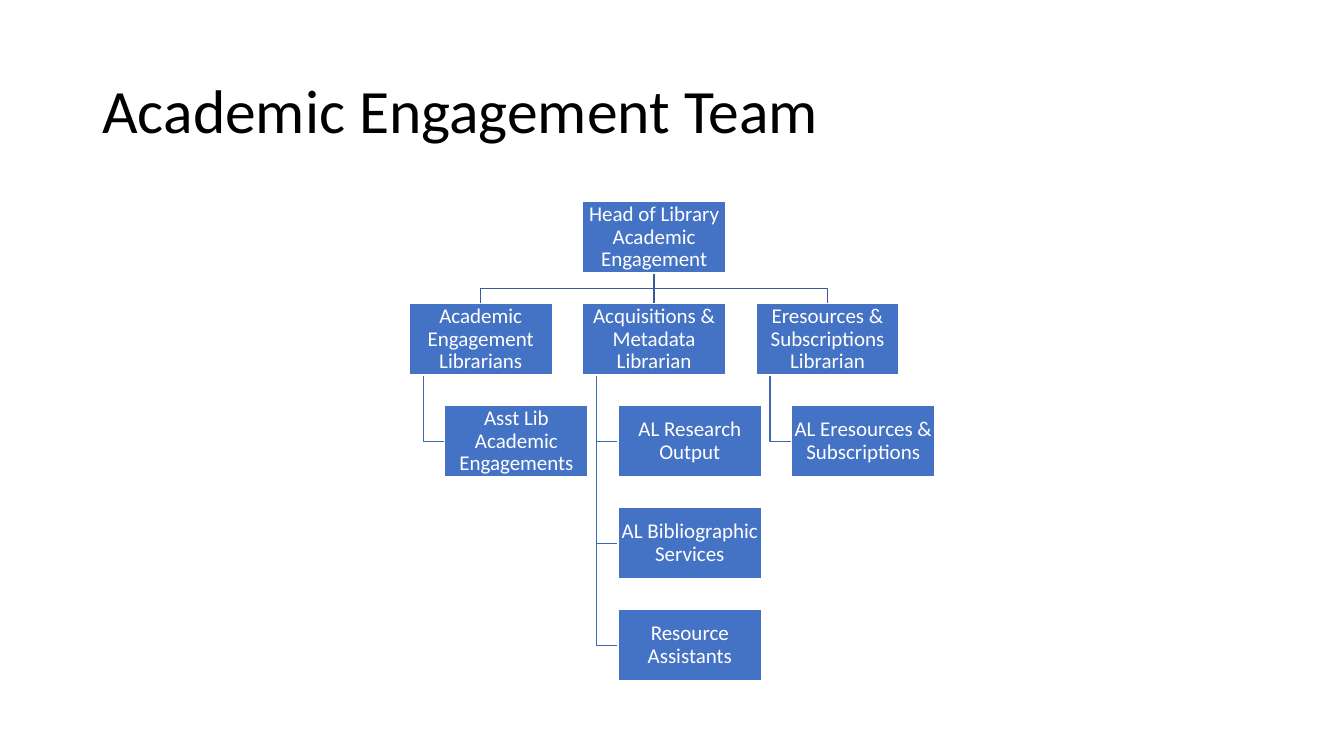
from lxml import etree
from pptx import Presentation
from pptx.dml.color import RGBColor
from pptx.enum import shapes, text
from pptx.oxml.ns import qn
from pptx.util import Cm, Pt

TITLE = "Academic Engagement Team"
HEAD = "Head of Library Academic Engagement"
BRANCHES = [
    ("Academic Engagement Librarians", ["Asst Lib Academic Engagements"]),
    ("Acquisitions & Metadata Librarian",
     ["AL Research Output", "AL Bibliographic Services", "Resource Assistants"]),
    ("Eresources & Subscriptions Librarian", ["AL Eresources & Subscriptions"]),
]

THEME = {
    "font": "Calibri",
    "title_size": Pt(44),
    "box_size": Pt(15),
    "title": RGBColor(0x00, 0x00, 0x00),
    "box": RGBColor(0x44, 0x72, 0xC4),
    "box_text": RGBColor(0xFF, 0xFF, 0xFF),
    "upper_line": RGBColor(0x36, 0x5B, 0x9D),
    "lower_line": RGBColor(0x3E, 0x67, 0xB2),
    "line_width": Pt(1),
}

# Chart geometry in centimetres
LEFT, TOP = 10.31, 5.08
BOX_WIDTH, BOX_HEIGHT = 3.61, 1.8
COLUMN_STEP, ROW_STEP = 4.37, 2.57
INDENT = 0.9
TRUNK = 0.36
INSET = 0.03


def write(shape, words, size, color, align):
    frame = shape.text_frame
    settings = {"word_wrap": True, "vertical_anchor": text.MSO_ANCHOR.MIDDLE}
    for name, value in settings.items():
        setattr(frame, name, value)
    paragraph = frame.paragraphs[0]
    paragraph.text = words
    paragraph.alignment = align
    paragraph.line_spacing = 0.9
    font = paragraph.runs[0].font
    for name, value in {"name": THEME["font"], "size": size}.items():
        setattr(font, name, value)
    font.color.rgb = color


def set_line(shape, color):
    shape.line.color.rgb = color
    shape.line.width = THEME["line_width"]


def add_box(slide, words, left, top):
    shape = slide.shapes.add_shape(
        shapes.MSO_SHAPE.RECTANGLE,
        Cm(left), Cm(top), Cm(BOX_WIDTH), Cm(BOX_HEIGHT))
    shape.shadow.inherit = False
    shape.fill.solid()
    shape.fill.fore_color.rgb = THEME["box"]
    set_line(shape, THEME["box_text"])
    for side in ("left", "top", "right", "bottom"):
        setattr(shape.text_frame, f"margin_{side}", Cm(INSET))
    write(shape, words, THEME["box_size"], THEME["box_text"],
          text.PP_ALIGN.CENTER)


def add_link(slide, points, color):
    """Draw a straight connector for two points, an open bent line for more."""
    points = [(Cm(x), Cm(y)) for x, y in points]
    if len(points) == 2:
        shape = slide.shapes.add_connector(
            shapes.MSO_CONNECTOR.STRAIGHT, *points[0], *points[1])
        etree.SubElement(shape.element.spPr, qn("a:effectLst"))
    else:
        builder = slide.shapes.build_freeform(*points[0])
        builder.add_line_segments(points[1:], close=False)
        shape = builder.convert_to_shape()
        shape.shadow.inherit = False
        shape.fill.background()
    set_line(shape, color)


def plan_chart():
    """Return the boxes and links of the whole tree."""
    boxes, links = [], []
    head_left = LEFT + COLUMN_STEP * (len(BRANCHES) - 1) / 2
    head_x, head_bottom = head_left + BOX_WIDTH / 2, TOP + BOX_HEIGHT
    branch_top = TOP + ROW_STEP
    bend = (head_bottom + branch_top) / 2
    boxes.append((HEAD, head_left, TOP))
    for column, (lead, members) in enumerate(BRANCHES):
        left = LEFT + column * COLUMN_STEP
        center = left + BOX_WIDTH / 2
        boxes.append((lead, left, branch_top))
        start, end = (head_x, head_bottom), (center, branch_top)
        straight = abs(center - head_x) < 0.01
        bends = [] if straight else [(head_x, bend), (center, bend)]
        links.append(([start, *bends, end], THEME["upper_line"]))
        trunk = left + TRUNK
        for row, member in enumerate(members, 1):
            top = branch_top + row * ROW_STEP
            middle = top + BOX_HEIGHT / 2
            boxes.append((member, left + INDENT, top))
            links.append(([(trunk, branch_top + BOX_HEIGHT), (trunk, middle),
                           (left + INDENT, middle)], THEME["lower_line"]))
    return boxes, links


def main():
    presentation = Presentation()
    presentation.slide_width, presentation.slide_height = Cm(33.87), Cm(19.05)
    slide = presentation.slides.add_slide(presentation.slide_layouts[6])
    title = slide.shapes.add_textbox(Cm(2.33), Cm(1.01), Cm(29.21), Cm(3.68))
    write(title, TITLE, THEME["title_size"], THEME["title"],
          text.PP_ALIGN.LEFT)
    boxes, links = plan_chart()
    for points, color in links:
        add_link(slide, points, color)
    for words, left, top in boxes:
        add_box(slide, words, left, top)
    presentation.save("out.pptx")


if __name__ == "__main__":
    main()
